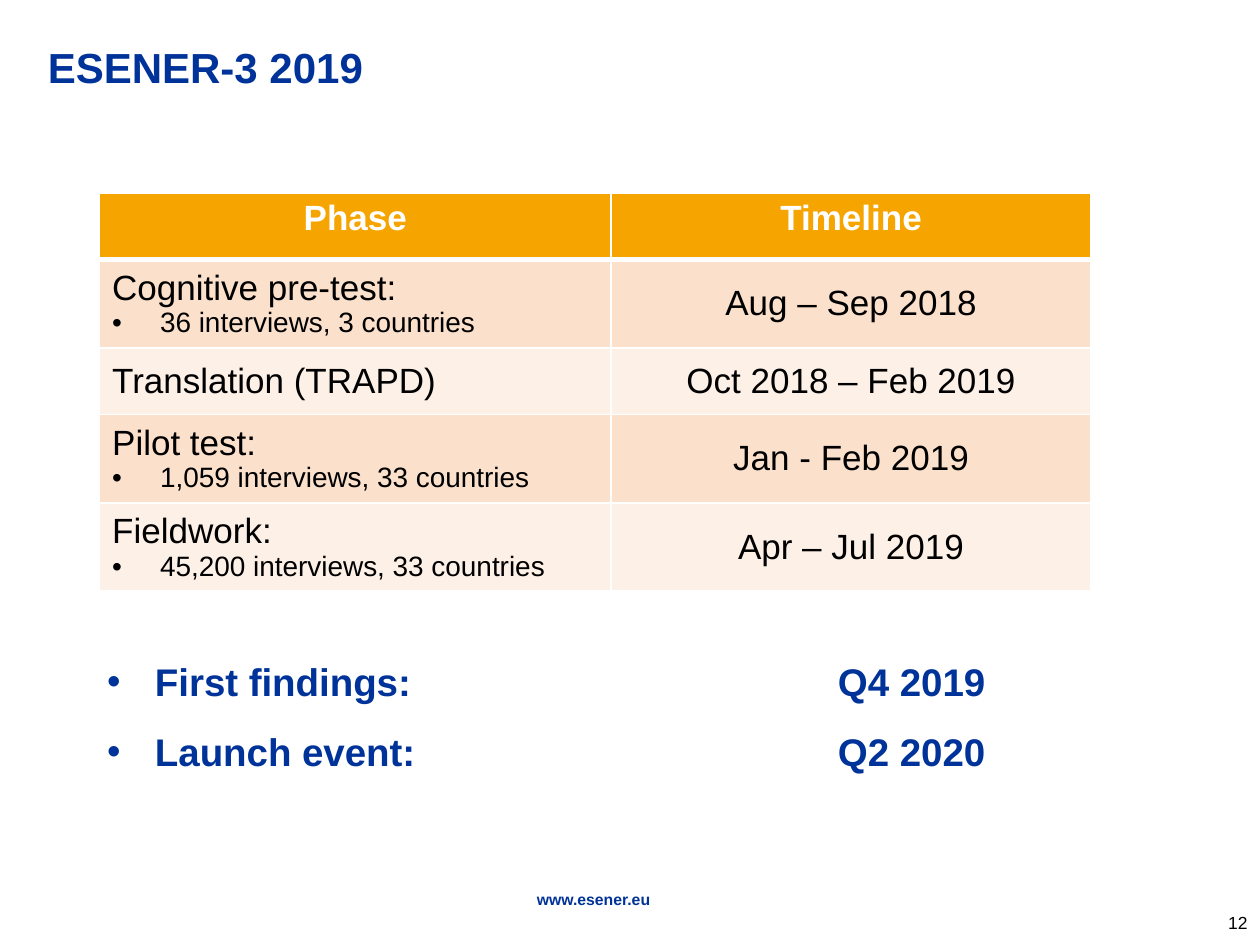
import pptx
import pptx.dml.color
import pptx.enum.text
import pptx.oxml
import pptx.oxml.ns
import pptx.util
from pptx.util import Inches

BLUE = pptx.dml.color.RGBColor(0x00, 0x33, 0x99)
BLACK = pptx.dml.color.RGBColor(0x00, 0x00, 0x00)
WHITE = pptx.dml.color.RGBColor(0xFF, 0xFF, 0xFF)
ORANGE = pptx.dml.color.RGBColor(0xF6, 0xA4, 0x00)
PEACH = pptx.dml.color.RGBColor(0xFB, 0xE0, 0xCC)
CREAM = pptx.dml.color.RGBColor(0xFD, 0xF0, 0xE7)

LEFT = pptx.enum.text.PP_ALIGN.LEFT
CENTER = pptx.enum.text.PP_ALIGN.CENTER
RIGHT = pptx.enum.text.PP_ALIGN.RIGHT
TOP = pptx.enum.text.MSO_ANCHOR.TOP
MIDDLE = pptx.enum.text.MSO_ANCHOR.MIDDLE
INDENT = Inches(0.38)

PHASES = [
    ("Cognitive pre-test:", "36 interviews, 3 countries", "Aug – Sep 2018"),
    ("Translation (TRAPD)", None, "Oct 2018 – Feb 2019"),
    ("Pilot test:", "1,059 interviews, 33 countries", "Jan - Feb 2019"),
    ("Fieldwork:", "45,200 interviews, 33 countries", "Apr – Jul 2019"),
]
MILESTONES = ["First findings:\t\tQ4 2019", "Launch event:\t\tQ2 2020"]


def add_element(parent, xml):
    """Append a drawing element, given as a tag with attributes and content."""
    tag = xml.split()[0]
    name, separator, content = xml.partition(">")
    namespace = pptx.oxml.ns.nsdecls("a")
    parent.append(pptx.oxml.parse_xml(f"<a:{name} {namespace}>{content}</a:{tag.rstrip('>')}>"))


def write(frame, text, size=20, color=BLACK, bold=False, align=LEFT,
          bullet=False, tabs=(), before=0, new=False):
    """Write one formatted paragraph into a text frame."""
    paragraph = frame.add_paragraph() if new else frame.paragraphs[0]
    if bullet:
        properties = paragraph._p.get_or_add_pPr()
        properties.set("marL", str(INDENT))
        properties.set("indent", str(-INDENT))
        add_element(properties, 'buFont typeface="Arial">')
        add_element(properties, 'buChar char="•">')
        if tabs:
            stops = "".join(f'<a:tab pos="{Inches(stop)}" algn="r"/>' for stop in tabs)
            add_element(properties, f"tabLst >{stops}")
    paragraph.alignment = align
    paragraph.space_before = pptx.util.Pt(before)
    run = paragraph.add_run()
    run.text = text
    run.font.name = "Arial"
    run.font.size = pptx.util.Pt(size)
    run.font.bold = bold
    run.font.color.rgb = color
    return paragraph


def place(shape, left, top, width, height):
    """Move a placeholder to its box and stop its text from shrinking."""
    shape.left, shape.top = Inches(left), Inches(top)
    shape.width, shape.height = Inches(width), Inches(height)
    shape.text_frame.auto_size = pptx.enum.text.MSO_AUTO_SIZE.NONE


def format_cell(cell, fill, anchor, top=1, bottom=1):
    """Give a cell its white borders, fill and anchor."""
    properties = cell._tc.get_or_add_tcPr()
    for side, width in zip("LRTB", (1, 1, top, bottom)):
        add_element(properties, f'ln{side} w="{pptx.util.Pt(width)}">'
                    f'<a:solidFill><a:srgbClr val="{WHITE}"/></a:solidFill>')
    cell.fill.solid()
    cell.fill.fore_color.rgb = fill
    cell.vertical_anchor = anchor


def build_title(slide, left, top, width, height):
    """Place the slide title."""
    title = slide.shapes.title
    place(title, left, top, width, height)
    title.text_frame.vertical_anchor = MIDDLE
    write(title.text_frame, "ESENER-3 2019", size=24, color=BLUE, bold=True)


def build_phases(slide, left, top, width, row_height):
    """Place the table of survey phases and their timeline."""
    count = len(PHASES) + 1
    table = slide.shapes.add_table(count, 2, Inches(left), Inches(top),
                                   Inches(width), Inches(row_height * count)).table
    table.columns[0].width = Inches(4.06)
    table.columns[1].width = Inches(width - 4.06)
    for row in table.rows:
        row.height = Inches(row_height)
    for column, heading in enumerate(("Phase", "Timeline")):
        cell = table.cell(0, column)
        format_cell(cell, ORANGE, TOP, bottom=3)
        write(cell.text_frame, heading, color=WHITE, bold=True, align=CENTER)
    for index, (phase, detail, dates) in enumerate(PHASES, start=1):
        phase_cell, date_cell = table.cell(index, 0), table.cell(index, 1)
        for cell in (phase_cell, date_cell):
            format_cell(cell, PEACH if index % 2 else CREAM, MIDDLE, top=3 if index == 1 else 1)
        write(phase_cell.text_frame, phase)
        if detail:
            write(phase_cell.text_frame, detail, size=16, bullet=True, new=True)
        write(date_cell.text_frame, dates, align=CENTER)


def build_milestones(slide, left, top, width, height):
    """Place the list of coming milestones."""
    body = slide.placeholders[1]
    place(body, left, top, width, height)
    for index, milestone in enumerate(MILESTONES):
        write(body.text_frame, milestone, size=22, color=BLUE, bold=True, bullet=True,
              tabs=(4.9, 6.97), before=14 * index, new=index > 0)


def build_footer(slide, left, top, width, height):
    """Place the web address and, at the right edge, the page number."""
    address = slide.shapes.add_textbox(Inches(left), Inches(top), Inches(width), Inches(height))
    frame = address.text_frame
    frame.word_wrap = True
    frame.margin_left = frame.margin_right = frame.margin_top = frame.margin_bottom = 0
    paragraph = write(frame, "www.esener.eu", size=9, color=BLUE, bold=True, align=CENTER)
    paragraph.line_spacing = 0.9
    number = slide.shapes.add_textbox(Inches(9.33), Inches(7.12), Inches(0.67), Inches(0.4))
    number.text_frame.word_wrap = True
    number.text_frame.vertical_anchor = MIDDLE
    write(number.text_frame, "12", size=10, align=RIGHT)


def main():
    """Build and save the presentation."""
    presentation = pptx.Presentation()
    presentation.slide_width, presentation.slide_height = Inches(10), Inches(7.5)
    slide = presentation.slides.add_slide(presentation.slide_layouts[1])
    build_footer(slide, 1.52, 7.08, 6.38, 0.11)
    build_title(slide, 0.28, 0.13, 9.21, 0.8)
    build_milestones(slide, 0.75, 5.17, 8.35, 1.1)
    build_phases(slide, 0.79, 1.53, 7.87, 0.53)
    presentation.save("out.pptx")


if __name__ == "__main__":
    main()
